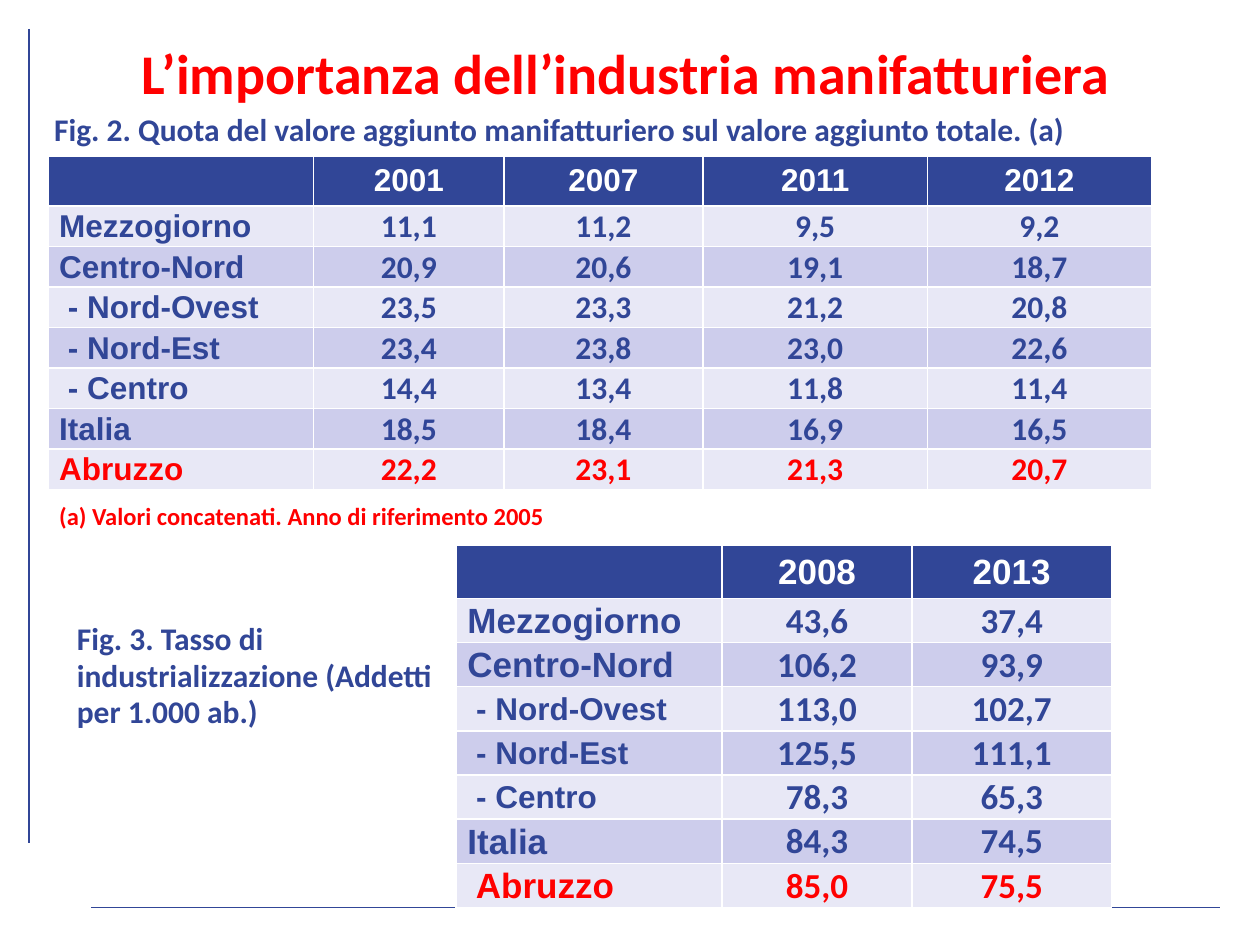
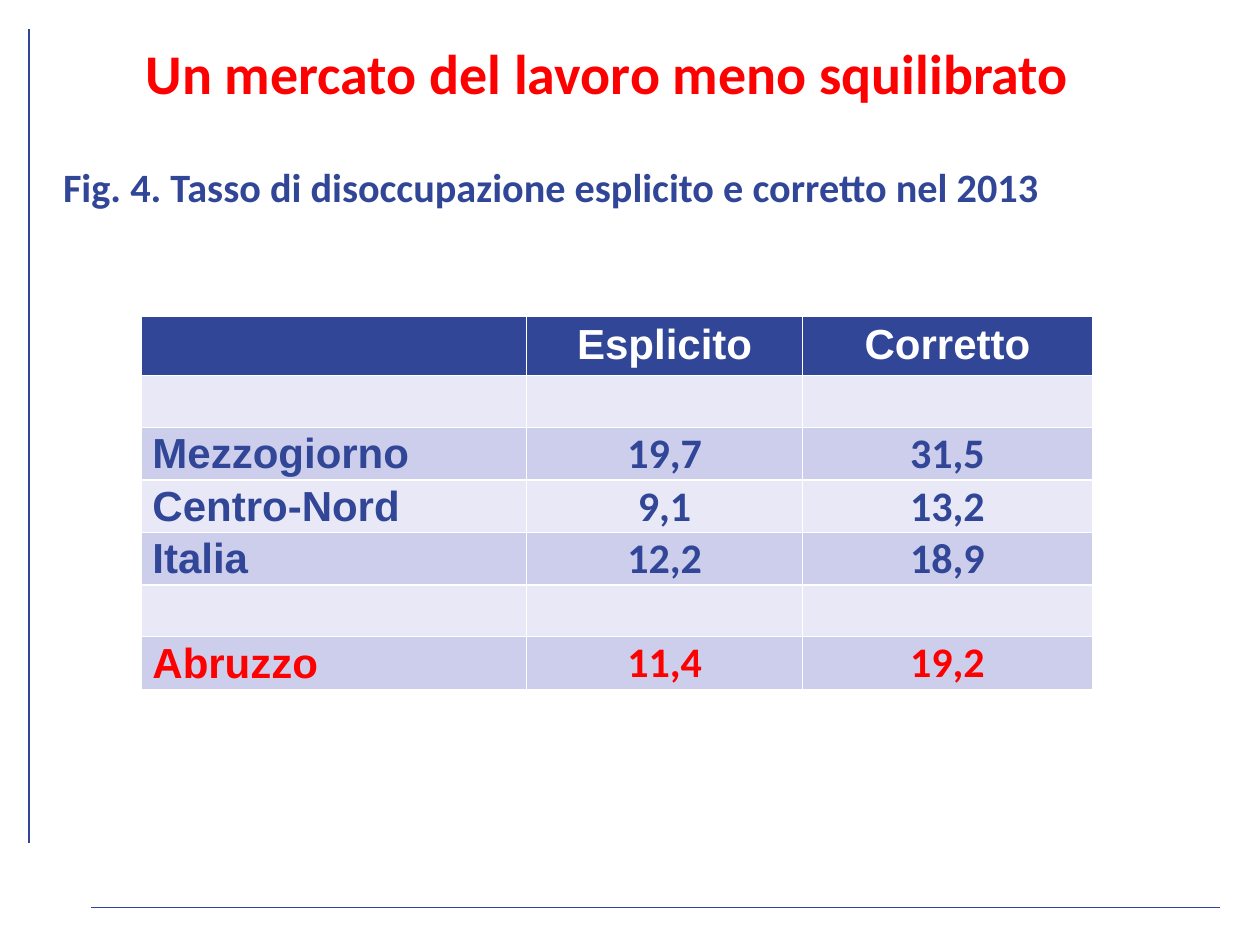
from dataclasses import dataclass

from lxml.etree import SubElement as Sub
from pptx import Presentation
from pptx.dml.color import RGBColor as RGB
from pptx.enum.text import MSO_ANCHOR as Anchor, MSO_AUTO_SIZE as Fit, PP_ALIGN as Align
from pptx.oxml.ns import qn
from pptx.util import Inches as In, Pt


@dataclass(frozen=True)
class Theme:
    blue: str = "314697"
    red: str = "FF0000"
    white: str = "FFFFFF"
    bands: tuple = ("E8E8F6", "CDCDEC")
    text: str = "Calibri"
    label: str = "Arial"
    title: int = 32
    body: int = 18
    note: int = 14
    rule: float = 0.75
    lead: float = 0.97


T = Theme()
WIDE, HIGH = 10, 7.5
RULES = [((0.23, 0.23), (0.23, 6.69)), ((9.68, 7.2), (0.72, 7.2))]
RED_ROW = "Abruzzo"

SLIDES = [
    dict(
        title="L’importanza dell’industria manifatturiera",
        width=9.12,
        texts=[
            ("Fig. 2. Quota del valore aggiunto manifatturiero sul valore aggiunto totale. (a)",
             (0.34, 0.85, 9.37, 0.38), {}),
            ("Fig. 3. Tasso di industrializzazione (Addetti per 1.000 ab.)",
             (0.52, 4.89, 3.12, 0.98), {}),
            ("(a) Valori concatenati. Anno di riferimento 2005",
             (0.38, 3.95, 8.07, 0.33), dict(size=T.note, color=T.red)),
        ],
        tables=[
            dict(at=(0.38, 1.23), cols=(2.11, 1.51, 1.58, 1.78, 1.78),
                 high=2.64, head=0.39, size=18, top=3, rows=[
                     ("", "2001", "2007", "2011", "2012"),
                     ("Mezzogiorno", "11,1", "11,2", "9,5", "9,2"),
                     ("Centro-Nord", "20,9", "20,6", "19,1", "18,7"),
                     (" - Nord-Ovest", "23,5", "23,3", "21,2", "20,8"),
                     (" - Nord-Est", "23,4", "23,8", "23,0", "22,6"),
                     (" - Centro", "14,4", "13,4", "11,8", "11,4"),
                     ("Italia", "18,5", "18,4", "16,9", "16,5"),
                     ("Abruzzo", "22,2", "23,1", "21,3", "20,7")]),
            dict(at=(3.62, 4.33), cols=(2.11, 1.51, 1.58),
                 high=2.82, head=0.42, size=20, top=1, rows=[
                     ("", "2008", "2013"),
                     ("Mezzogiorno", "43,6", "37,4"),
                     ("Centro-Nord", "106,2", "93,9"),
                     (" - Nord-Ovest", "113,0", "102,7"),
                     (" - Nord-Est", "125,5", "111,1"),
                     (" - Centro", "78,3", "65,3"),
                     ("Italia", "84,3", "74,5"),
                     (" Abruzzo", "85,0", "75,5")]),
        ],
    ),
    dict(
        title="Un mercato del lavoro meno squilibrato",
        width=8.82,
        texts=[("Fig. 4. Tasso di disoccupazione esplicito e corretto nel 2013",
                (0.41, 1.27, 9.12, 0.48), dict(size=23))],
        tables=[
            dict(at=(1.12, 2.5), cols=(3.06, 2.19, 2.3),
                 high=2.95, head=0.48, size=24, top=3, rows=[
                     ("", "Esplicito", "Corretto"),
                     ("", "", ""),
                     ("Mezzogiorno", "19,7", "31,5"),
                     ("Centro-Nord", "9,1", "13,2"),
                     ("Italia", "12,2", "18,9"),
                     ("", "", ""),
                     ("Abruzzo", "11,4", "19,2")]),
        ],
    ),
]


def write(frame, text, size=T.body, color=T.blue, font=T.text, align=Align.LEFT, lead=None):
    par = frame.paragraphs[0]
    par.alignment = align
    par.line_spacing = lead
    run = par.add_run()
    run.text = text
    run.font.name, run.font.size, run.font.bold = font, Pt(size), True
    run.font.color.rgb = RGB.from_string(color)


def fill_box(box, at, text, **form):
    box.left, box.top, box.width, box.height = map(In, at)
    frame = box.text_frame
    frame.word_wrap, frame.auto_size = True, Fit.NONE
    frame.vertical_anchor = Anchor.TOP
    frame.margin_left = frame.margin_right = In(0.09)
    frame.margin_top = frame.margin_bottom = In(0.04)
    write(frame, text, lead=T.lead, **form)


def add_rule(slide, start, end):
    line = slide.shapes.add_connector(1, *map(In, start + end))
    line.line.color.rgb = RGB.from_string(T.blue)
    line.line.width = Pt(T.rule)
    Sub(line._element.spPr, qn("a:effectLst"))


def edge(cell, top):
    """Draw white cell borders; must run before the cell gets its fill."""
    props = cell._tc.get_or_add_tcPr()
    for side, width in zip("LRTB", (1, 1, top, 1)):
        line = Sub(props, qn("a:ln" + side), w=str(Pt(width)))
        Sub(Sub(line, qn("a:solidFill")), qn("a:srgbClr"), val=T.white)


def style_cell(cell, text, row, col, name, size, top):
    head, label = row == 0, col == 0
    edge(cell, top if head else 1)
    cell.fill.solid()
    cell.fill.fore_color.rgb = RGB.from_string(T.blue if head else T.bands[(row - 1) % 2])
    cell.vertical_anchor = Anchor.MIDDLE
    cell.margin_left = In(0.09 if head or label else 0.01)
    cell.margin_right = In(0.09 if head else 0.01)
    cell.margin_top = In(0.05 if head else 0.01)
    cell.margin_bottom = In(0.05 if head else 0)
    if text:
        write(cell.text_frame, text,
              size=T.body if text.startswith(" -") else size,
              color=T.white if head else T.red if name.strip() == RED_ROW else T.blue,
              font=T.label if head or label else T.text,
              align=Align.LEFT if label else Align.CENTER)


def add_grid(slide, at, cols, high, head, size, top, rows):
    box = map(In, (*at, sum(cols), high))
    grid = slide.shapes.add_table(len(rows), len(cols), *box).table
    grid.horz_banding = False
    for col, width in zip(grid.columns, cols):
        col.width = In(width)
    step = (high - head) / (len(rows) - 1)
    for r, row in enumerate(rows):
        grid.rows[r].height = In(step if r else head)
        for c, text in enumerate(row):
            style_cell(grid.cell(r, c), text, r, c, row[0], size, top)


def add_slide(deck, title, width, texts, tables):
    slide = deck.slides.add_slide(deck.slide_layouts[5])
    fill_box(slide.shapes.title, (0.41, 0.3, width, 0.62), title,
             size=T.title, color=T.red, align=Align.CENTER)
    for start, end in RULES:
        add_rule(slide, start, end)
    for table in tables:
        add_grid(slide, **table)
    for text, at, form in texts:
        fill_box(slide.shapes.add_textbox(0, 0, 0, 0), at, text, **form)


def main():
    deck = Presentation()
    deck.slide_width, deck.slide_height = In(WIDE), In(HIGH)
    for page in SLIDES:
        add_slide(deck, **page)
    deck.save("out.pptx")


if __name__ == "__main__":
    main()
